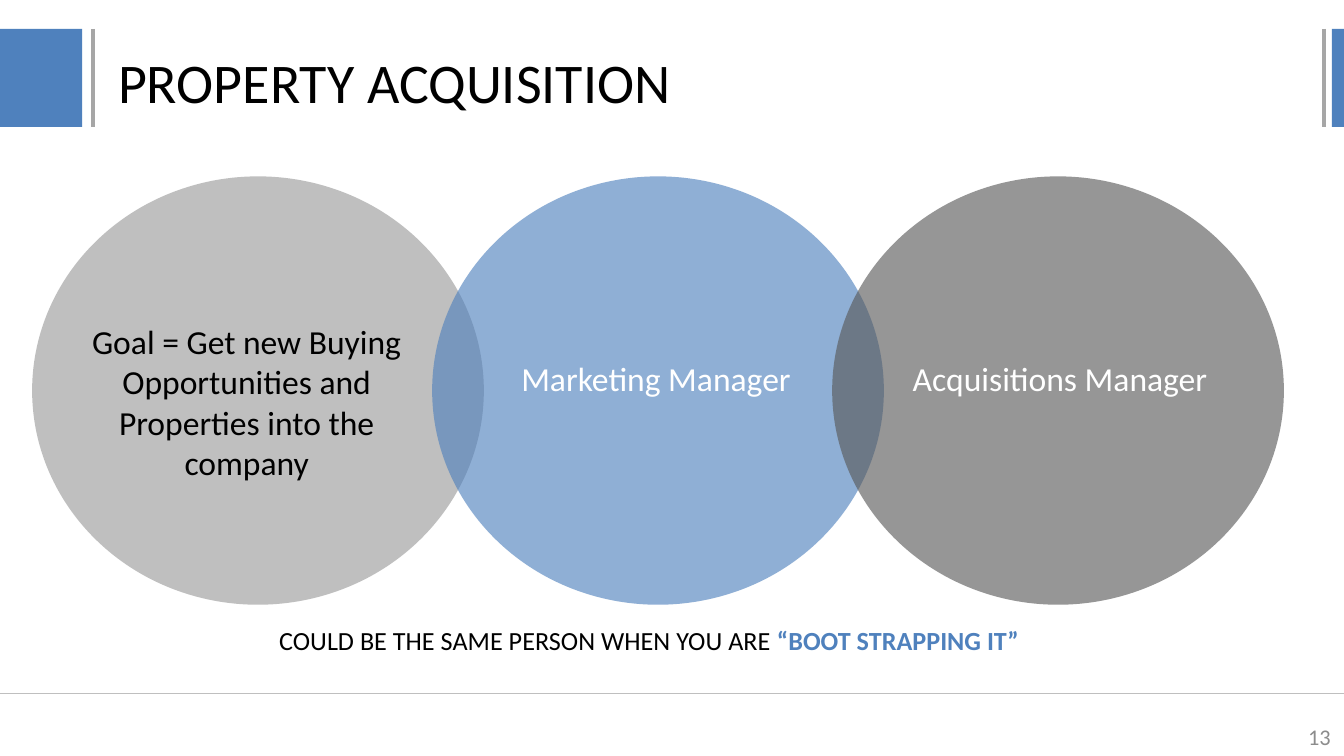
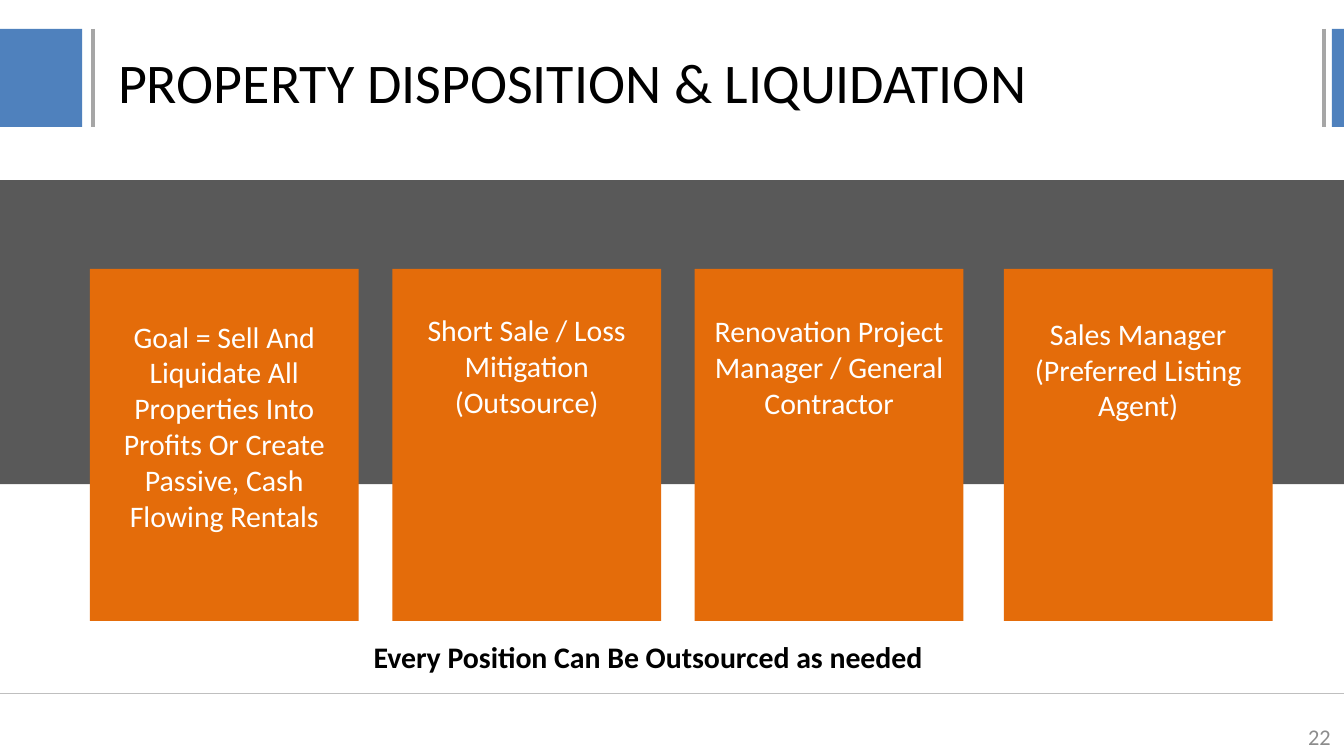
from lxml.etree import SubElement
from pptx import Presentation
from pptx.dml.color import RGBColor
from pptx.enum.shapes import MSO_CONNECTOR, MSO_SHAPE
from pptx.enum.text import MSO_ANCHOR, PP_ALIGN
from pptx.oxml.ns import qn
from pptx.util import Pt

WIDTH, HEIGHT = 720, 405
COLORS = {
    "blue": "4F81BD",
    "orange": "E46C0A",
    "dark": "595959",
    "silver": "BFBFBF",
    "rule": "A6A6A6",
    "number": "8C8C8C",
    "black": "000000",
    "white": "FFFFFF",
}
STYLES = {
    "title": {"size": Pt(30)},
    "number": {"size": Pt(12)},
    "circle": {"size": Pt(18)},
    "card": {"size": Pt(16)},
    "caption": {"size": Pt(14)},
    "strong": {"size": Pt(14), "bold": True},
    "strong_large": {"size": Pt(16), "bold": True},
}


def rgb(name):
    return RGBColor.from_string(COLORS[name])


def add_block(slide, kind, box, color, opacity=None):
    """Draw a borderless filled shape; opacity is a percentage."""
    block = slide.shapes.add_shape(kind, *map(Pt, box))
    block.shadow.inherit = False
    block.fill.solid()
    block.fill.fore_color.rgb = rgb(color)
    block.line.fill.background()
    if opacity is not None:
        tint = block.fill._xPr.find(qn("a:solidFill"))[0]
        SubElement(tint, qn("a:alpha"), val=str(opacity * 1000))


def add_rule(slide, start, end, color, weight):
    rule = slide.shapes.add_connector(
        MSO_CONNECTOR.STRAIGHT, *map(Pt, (*start, *end)))
    rule.line.color.rgb = rgb(color)
    rule.line.width = Pt(weight)
    SubElement(rule._element.spPr, qn("a:effectLst"))


def add_words(slide, box, runs, align=PP_ALIGN.LEFT, anchor=MSO_ANCHOR.TOP,
              indent=0):
    """Write one paragraph from (text, style, color) runs."""
    frame = slide.shapes.add_textbox(*map(Pt, box)).text_frame
    frame.word_wrap = True
    frame.vertical_anchor = anchor
    paragraph = frame.paragraphs[0]
    paragraph.alignment = align
    if indent:
        paragraph._p.get_or_add_pPr().set("marL", str(Pt(indent)))
    for text, style, color in runs:
        run = paragraph.add_run()
        run.text = text
        run.font.name = "Calibri"
        run.font.color.rgb = rgb(color)
        for attribute, value in STYLES[style].items():
            setattr(run.font, attribute, value)


def add_header(slide, title, top=15.5, height=52.5):
    for left, width, rule_x in ((0, 44, 49.7), (713.5, 6.5, 709.2)):
        add_block(slide, MSO_SHAPE.RECTANGLE, (left, top, width, height),
                  "blue")
        add_rule(slide, (rule_x, top), (rule_x, top + height), "rule", 2.25)
    add_words(slide, (56.2, top + 1, 645, 54), [(title, "title", "black")],
              anchor=MSO_ANCHOR.MIDDLE)


def add_footer(slide, number, top=371.5):
    add_rule(slide, (WIDTH, top), (0, top), "silver", 0.75)
    add_words(slide, (552, top + 12.3, 168, 21.5),
              [(number, "number", "number")],
              PP_ALIGN.RIGHT, MSO_ANCHOR.MIDDLE)


def add_circles(slide, box, step, circles):
    """Overlap circles in a row, then write their labels on top."""
    left, top, width, height = box
    for index, (fill, opacity, *_) in enumerate(circles):
        add_block(slide, MSO_SHAPE.OVAL,
                  (left + index * step, top, width, height), fill, opacity)
    for index, (_, _, label, color, label_box, align) in enumerate(circles):
        dx, dy, label_width, label_height = label_box
        add_words(slide, (left + index * step + dx, top + dy,
                          label_width, label_height),
                  [(label, "circle", color)], align)


def add_cards(slide, box, cards):
    """Place cards by (left, label offset, label) in a row."""
    row_left, top, width, height = box
    for dx, dy, label in cards:
        left = row_left + dx
        add_block(slide, MSO_SHAPE.RECTANGLE, (left, top, width, height),
                  "orange")
        add_words(slide, (left, top + dy, width, height - dy),
                  [(label, "card", "white")], PP_ALIGN.CENTER)


def start_slide(deck, title, number):
    slide = deck.slides.add_slide(deck.slide_layouts[6])
    add_header(slide, title)
    add_footer(slide, number)
    return slide


def build_acquisition(deck):
    slide = start_slide(deck, "PROPERTY ACQUISITION", "13")
    add_circles(slide, (17.2, 94.5, 242, 229.5), 214.3, [
        ("silver", None,
         "Goal = Get new Buying Opportunities and Properties into the company",
         "black", (13.8, 74, 202.3, 94.5), PP_ALIGN.CENTER),
        ("blue", 63, "Marketing Manager", "white",
         (40.7, 93.5, 170.6, 29), PP_ALIGN.LEFT),
        ("dark", 63, "Acquisitions Manager", "white",
         (36, 93.5, 183.6, 29), PP_ALIGN.LEFT),
    ])
    add_words(slide, (142.5, 331.2, 435, 24.5), [
        ("COULD BE THE SAME PERSON WHEN YOU ARE ", "caption", "black"),
        ("“BOOT STRAPPING IT”", "strong", "blue"),
    ])


def build_disposition(deck):
    slide = start_slide(deck, "PROPERTY DISPOSITION & LIQUIDATION", "22")
    add_block(slide, MSO_SHAPE.RECTANGLE, (0, 96.5, WIDTH, 163), "dark")
    step = 162
    add_cards(slide, (48.2, 144, 144, 188.7), [
        (0, 23, "Goal = Sell And Liquidate All Properties Into Profits "
                "Or Create Passive, Cash Flowing Rentals"),
        (step, 19.7, "Short Sale / Loss Mitigation (Outsource)"),
        (2 * step, 20, "Renovation Project Manager / General Contractor"),
        (3 * step + 3.6, 21.5, "Sales Manager (Preferred Listing Agent)"),
    ])
    add_words(slide, (157, 338.4, 359.3, 26.6),
              [("Every Position Can Be Outsourced as needed",
                "strong_large", "black")], indent=36)


def main():
    deck = Presentation()
    deck.slide_width, deck.slide_height = Pt(WIDTH), Pt(HEIGHT)
    build_acquisition(deck)
    build_disposition(deck)
    deck.save("out.pptx")


if __name__ == "__main__":
    main()
